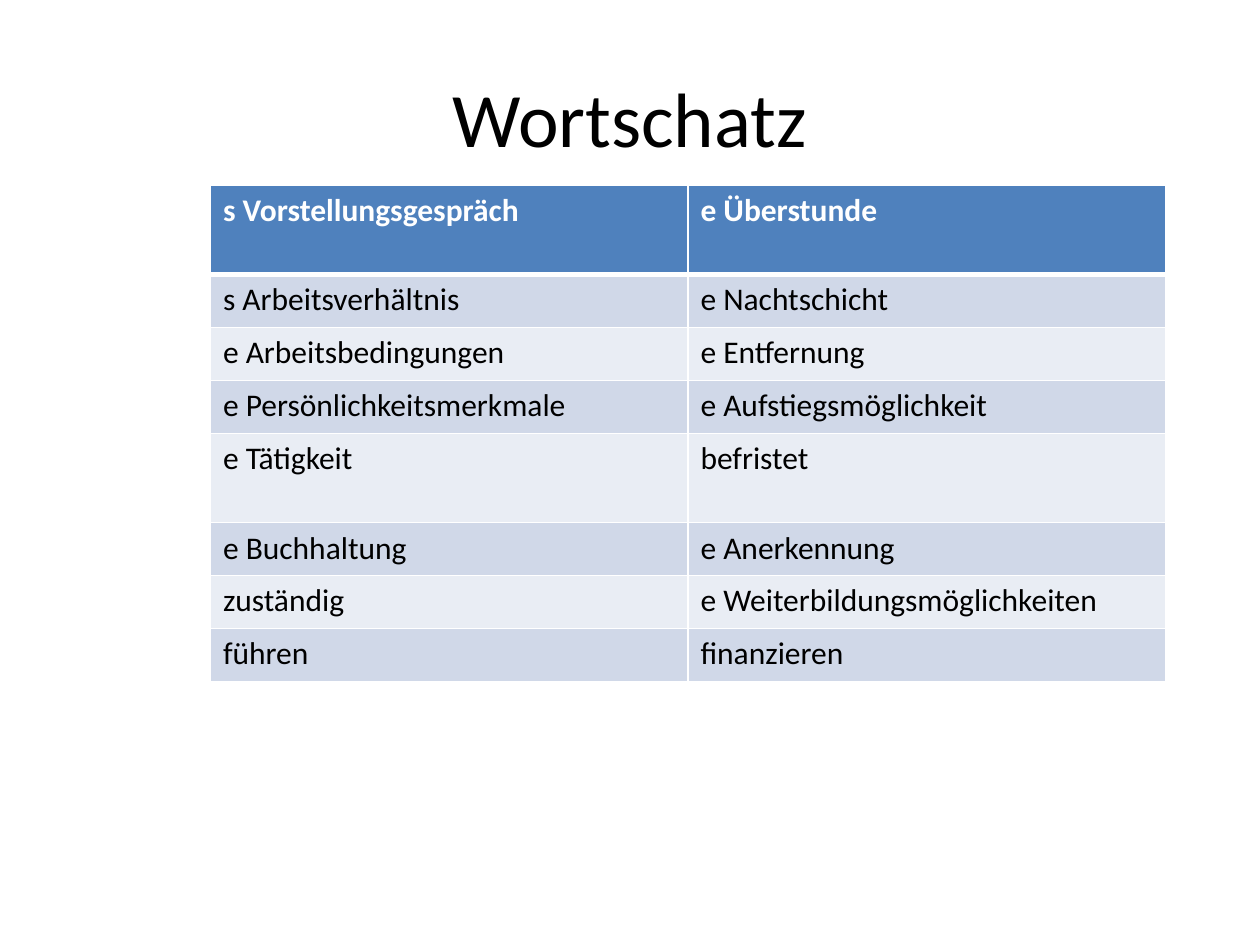
import pptx
import pptx.dml.color
import pptx.enum.text
import pptx.oxml
import pptx.oxml.ns
import pptx.util

COLORS = {
    "text": "000000",
    "header_text": "FFFFFF",
    "header": "4F81BD",
    "odd_row": "D0D8E8",
    "even_row": "E9EDF4",
    "border": "FFFFFF",
}
FONT = "Calibri"
WORDS = [
    ("s Vorstellungsgespräch", "e Überstunde"),
    ("s Arbeitsverhältnis", "e Nachtschicht"),
    ("e Arbeitsbedingungen", "e Entfernung"),
    ("e Persönlichkeitsmerkmale", "e Aufstiegsmöglichkeit"),
    ("e Tätigkeit", "befristet"),
    ("e Buchhaltung", "e Anerkennung"),
    ("zuständig", "e Weiterbildungsmöglichkeiten"),
    ("führen", "finanzieren"),
]
ROW_HEIGHT, TALL_HEIGHT = 0.42, 0.71
TALL_ROWS = (0, 4)


def rgb(name):
    return pptx.dml.color.RGBColor.from_string(COLORS[name])


def write_text(frame, text, size=18, color="text", bold=False, align="LEFT"):
    para = frame.paragraphs[0]
    para.alignment = getattr(pptx.enum.text.PP_ALIGN, align)
    span = para.add_run()
    span.text = text
    span.font.name = FONT
    span.font.size = pptx.util.Pt(size)
    span.font.bold = bold
    span.font.color.rgb = rgb(color)


def set_borders(cell, bottom=1):
    properties = cell._tc.get_or_add_tcPr()
    widths = {"lnL": 1, "lnR": 1, "lnT": 1, "lnB": bottom}
    # Border lines come before the fill in the cell properties
    for position, (side, width) in enumerate(widths.items()):
        line = pptx.oxml.parse_xml(
            f'<a:{side} {pptx.oxml.ns.nsdecls("a")} w="{pptx.util.Pt(width)}">'
            f'<a:solidFill><a:srgbClr val="{COLORS["border"]}"/></a:solidFill>'
            f'</a:{side}>')
        properties.insert(position, line)


def add_title(page, text):
    title = page.shapes.title
    title.left, title.top = pptx.util.Inches(0.5), pptx.util.Inches(0.3)
    title.width, title.height = pptx.util.Inches(9), pptx.util.Inches(1.25)
    title.text_frame.vertical_anchor = pptx.enum.text.MSO_ANCHOR.MIDDLE
    write_text(title.text_frame, text, size=44, align="CENTER")


def add_word_table(page, rows):
    heights = [TALL_HEIGHT if index in TALL_ROWS else ROW_HEIGHT
               for index in range(len(rows))]
    inches = pptx.util.Inches
    table = page.shapes.add_table(len(rows), len(rows[0]), inches(1.67), inches(1.47),
                                  inches(7.58), inches(sum(heights))).table
    table.horz_banding = False
    for index, words in enumerate(rows):
        table.rows[index].height = inches(heights[index])
        header = index == 0
        fill = "header" if header else "odd_row" if index % 2 else "even_row"
        for column, word in enumerate(words):
            cell = table.cell(index, column)
            cell.fill.solid()
            cell.fill.fore_color.rgb = rgb(fill)
            set_borders(cell, bottom=3 if header else 1)
            write_text(cell.text_frame, word, bold=header,
                       color="header_text" if header else "text")


def main():
    deck = pptx.Presentation()
    deck.slide_width, deck.slide_height = pptx.util.Inches(10), pptx.util.Inches(7.5)
    # Title Only layout
    page = deck.slides.add_slide(deck.slide_layouts[5])
    add_title(page, "Wortschatz")
    add_word_table(page, WORDS)
    deck.save("out.pptx")


if __name__ == "__main__":
    main()
